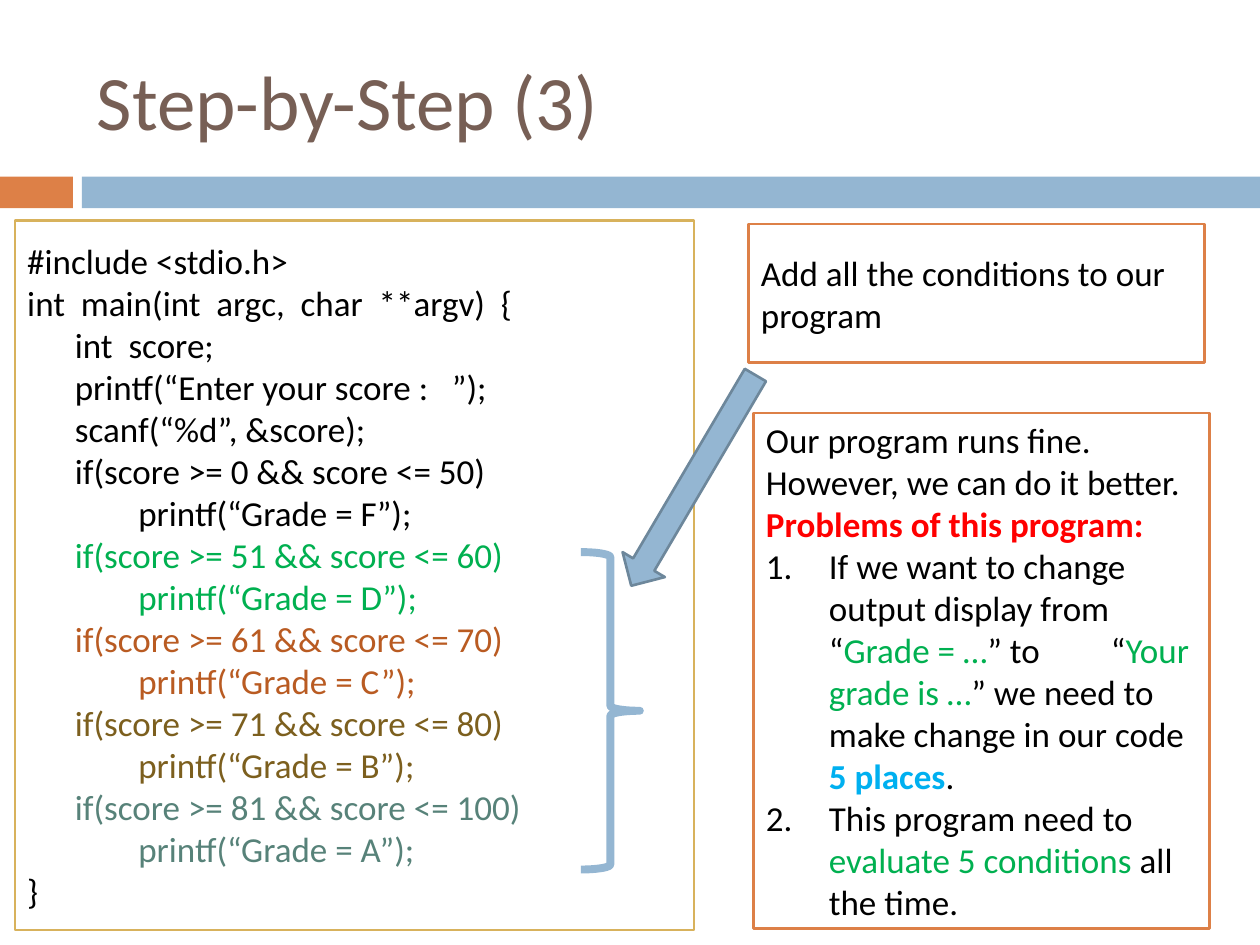
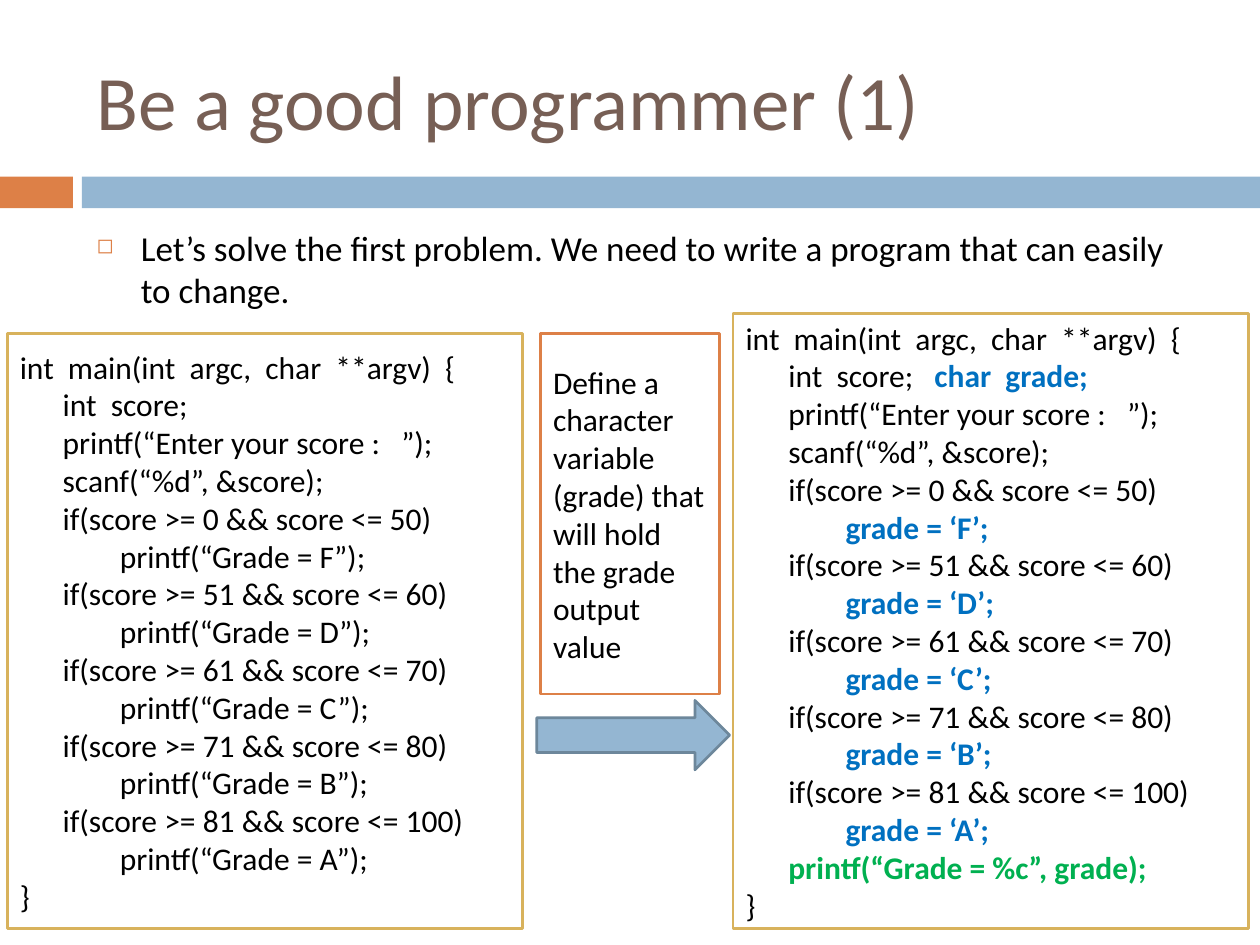
"""Build two slides on grading code, from a first version to a better one."""
from dataclasses import dataclass

from lxml.etree import SubElement
from pptx import Presentation
from pptx.dml.color import RGBColor
from pptx.enum.shapes import MSO_SHAPE as Shape
from pptx.enum.text import MSO_ANCHOR as Anchor, PP_ALIGN as Align
from pptx.oxml.ns import qn
from pptx.util import Cm, Pt

COLORS = {
    "orange": "DD8047", "blue": "94B6D2", "slate": "6D879B", "gold": "D8B25C",
    "brown": "775F55", "white": "FFFFFF", "black": "000000", "green": "00B050",
    "rust": "B95B22", "olive": "7C5F1E", "teal": "578279", "red": "FF0000",
    "sky": "00B0F0", "ink": "0070C0",
}
GRADES = [("F", 0, 50), ("D", 51, 60), ("C", 61, 70), ("B", 71, 80), ("A", 81, 100)]
GRADE_COLORS = dict(zip("FDCBA", ["black", "green", "rust", "olive", "teal"]))
INDENT_SPACES = (0, 6, 14)
SPACE_PER_POINT = 0.008


@dataclass
class Run:
    """A stretch of text with one look."""
    text: str
    color: str = "black"
    bold: bool = False
    spacing: int = 0


@dataclass
class Line:
    """A paragraph with its code level or bullet."""
    runs: list
    level: int = 0
    bullet: str = ""


class Deck:
    """Holds the style and the current slide."""

    font = "Calibri"

    def __init__(self):
        self.presentation = Presentation()
        self.presentation.slide_width = Cm(25.4)
        self.presentation.slide_height = Cm(19.05)
        self.slide = None

    def color(self, name):
        return RGBColor.from_string(COLORS[name])

    def new_slide(self, title):
        self.slide = self.presentation.slides.add_slide(self.presentation.slide_layouts[6])
        self.shape(Shape.RECTANGLE, (0, 3.56, 1.47, 0.64), "orange")
        self.shape(Shape.RECTANGLE, (1.65, 3.56, 23.75, 0.64), "blue")
        self.text_box((1.7, 0.64, 22.66, 2.74), [Line([Run(title, "brown")])], 44, Anchor.MIDDLE)

    def shape(self, kind, place, fill=None, line=None, width=1.5, rotation=0):
        shape = self.slide.shapes.add_shape(kind, *map(Cm, place))
        shape.shadow.inherit = False
        shape.rotation = rotation
        if fill:
            shape.fill.solid()
            shape.fill.fore_color.rgb = self.color(fill)
        else:
            shape.fill.background()
        if line:
            shape.line.color.rgb = self.color(line)
            shape.line.width = Pt(width)
        else:
            shape.line.fill.background()
        return shape

    def arrow(self, place, rotation=0):
        self.shape(Shape.RIGHT_ARROW, place, "blue", "slate", rotation=rotation)

    def brace(self, place):
        self.shape(Shape.RIGHT_BRACE, place, line="blue", width=4.5)

    def panel(self, place, border, lines, size):
        shape = self.shape(Shape.RECTANGLE, place, "white", border)
        self.fill_text(shape.text_frame, lines, size, Anchor.MIDDLE)

    def text_box(self, place, lines, size, anchor=Anchor.TOP):
        box = self.slide.shapes.add_textbox(*map(Cm, place))
        self.fill_text(box.text_frame, lines, size, anchor)

    def fill_text(self, frame, lines, size, anchor):
        frame.word_wrap = True
        frame.vertical_anchor = anchor
        for index, line in enumerate(lines):
            paragraph = frame.add_paragraph() if index else frame.paragraphs[0]
            paragraph.alignment = Align.LEFT
            self.indent(paragraph, line, size)
            for part in line.runs:
                self.add_run(paragraph, part, size)

    def indent(self, paragraph, line, size):
        properties = paragraph._p.get_or_add_pPr()
        if line.bullet == "number":
            self.hang(properties, 1.27)
            SubElement(properties, qn("a:buAutoNum"), type="arabicPeriod")
        elif line.bullet:
            paragraph.space_before = Pt(7)
            self.hang(properties, 0.89)
            tint = SubElement(properties, qn("a:buClr"))
            SubElement(tint, qn("a:srgbClr"), val=COLORS["orange"])
            SubElement(properties, qn("a:buSzPct"), val="60000")
            SubElement(properties, qn("a:buChar"), char=line.bullet)
        elif line.level:
            left = Cm(SPACE_PER_POINT * size * INDENT_SPACES[line.level])
            properties.set("marL", str(left))

    def hang(self, properties, length):
        properties.set("marL", str(Cm(length)))
        properties.set("indent", str(-Cm(length)))

    def add_run(self, paragraph, part, size):
        run = paragraph.add_run()
        run.text = part.text
        run.font.name = self.font
        run.font.size = Pt(size)
        run.font.bold = part.bold
        run.font.color.rgb = self.color(part.color)
        if part.spacing:
            run._r.get_or_add_rPr().set("spc", str(part.spacing * 100))


def program(result, colors=None, declared=(), ending=()):
    """Return the lines of main, with result giving the run for each grade."""
    lines = [
        Line([Run("int  main(int  argc,  char  **argv)  {")]),
        Line([Run("int  score;"), *declared], 1),
        Line([Run("printf(“Enter your score :   ”);")], 1),
        Line([Run("scanf(“%d”, &score);")], 1),
    ]
    for grade, low, high in GRADES:
        color = colors[grade] if colors else "black"
        lines.append(Line([Run(f"if(score >= {low} && score <= {high})", color)], 1))
        lines.append(Line([result(grade, color)], 2))
    return [*lines, *ending, Line([Run("}")])]


def print_grade(grade, color):
    """Return the statement that prints a grade."""
    return Run(f"printf(“Grade = {grade}”);", color)


def store_grade(grade, color):
    """Return the statement that stores a grade."""
    return Run(f"grade = ‘{grade}’;", "ink", True)


def step_slide(deck):
    """Add the slide with all conditions and their problems."""
    deck.new_slide("Step-by-Step (3)")
    code = [Line([Run("#include <stdio.h>")]), *program(print_grade, GRADE_COLORS)]
    deck.panel((0.3, 4.45, 13.69, 14.3), "gold", code, 20)
    deck.panel((15.09, 4.52, 9.19, 2.79), "orange",
               [Line([Run("Add all the conditions to our program")])], 20)
    deck.brace((11.71, 11.13, 1.19, 6.4))
    deck.arrow((11.51, 9.19, 4.93, 0.99), 120.5)
    problems = [
        Line([Run("Our program runs fine. However, we can do it better.")]),
        Line([Run("Problems of this program:", "red", True)]),
        Line([Run("If we want to change output display from “"),
              Run("Grade = …", "green"), Run("” to"), Run(" ", spacing=36), Run("“"),
              Run("Your grade is …", "green"),
              Run("” we need to make change in our code "),
              Run("5 places", "sky", True), Run(".")], bullet="number"),
        Line([Run("This program need to "), Run("evaluate 5 conditions ", "green"),
              Run("all the time.")], bullet="number"),
    ]
    deck.panel((15.19, 8.33, 9.19, 10.39), "orange", problems, 20)


def programmer_slide(deck):
    """Add the slide that compares the code before and after."""
    deck.new_slide("Be a good programmer (1)")
    deck.text_box((1.7, 4.45, 22.66, 12.5), [Line([Run(
        "Let’s solve the first problem. We need to write a program that can easily "
        "to change.")], bullet="◻")], 20)
    deck.panel((0.15, 6.73, 10.39, 11.99), "gold", program(print_grade), 18)
    improved = program(
        store_grade,
        declared=[Run(" ", spacing=8), Run("char  grade;", "ink", True)],
        ending=[Line([Run("printf(“Grade = %c”, grade);", "green", True)], 1)])
    deck.panel((14.78, 6.32, 10.39, 12.4), "gold", improved, 18)
    deck.arrow((10.82, 14.12, 3.89, 1.4))
    deck.panel((10.9, 6.73, 3.61, 7.26), "orange", [Line([Run(
        "Define a character variable (grade) that will hold the grade output value")])], 18)


def main():
    """Build and save the presentation."""
    deck = Deck()
    step_slide(deck)
    programmer_slide(deck)
    deck.presentation.save("out.pptx")


if __name__ == "__main__":
    main()
